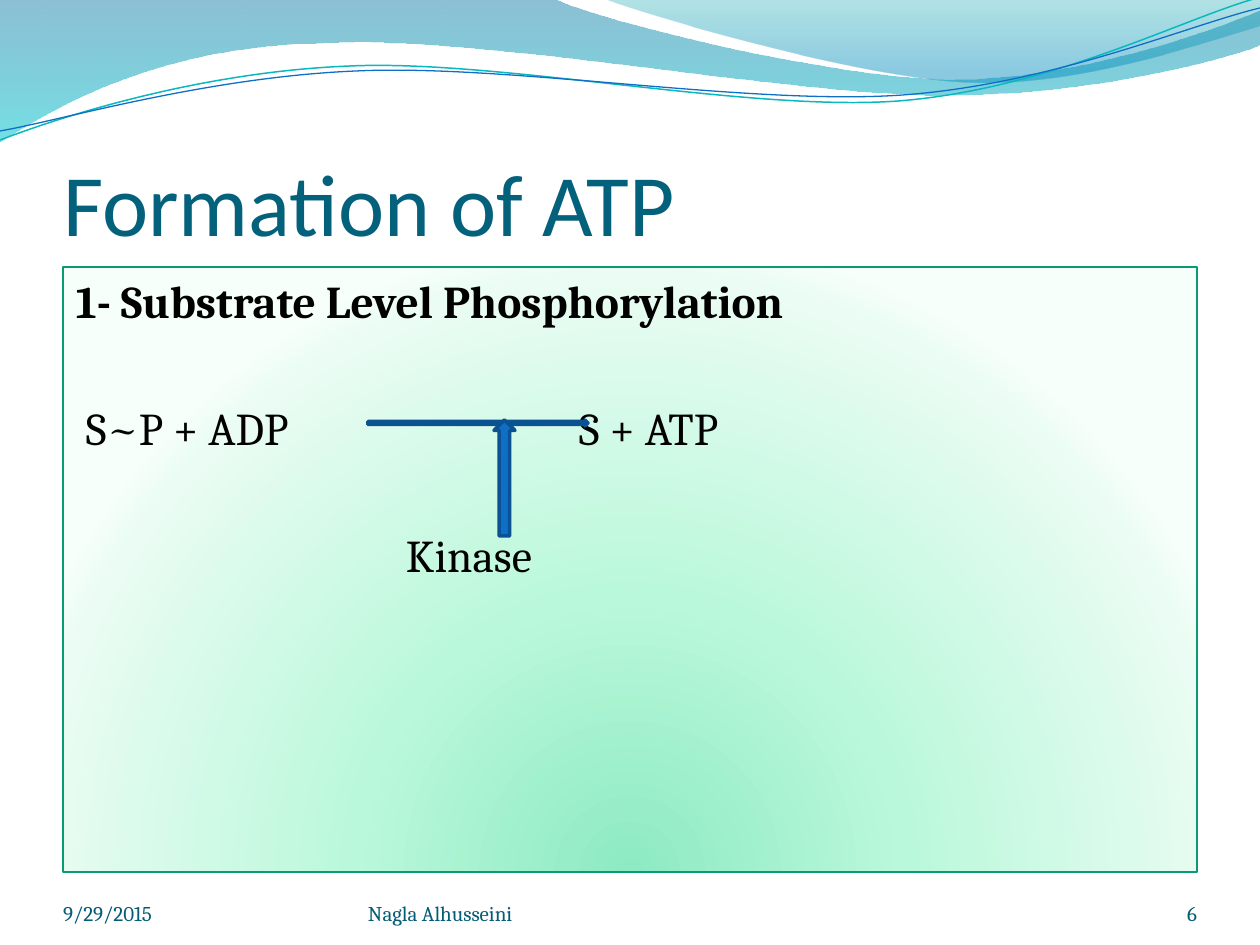
from dataclasses import dataclass

from pptx import Presentation
from pptx.dml.color import RGBColor
from pptx.enum.shapes import MSO_SHAPE
from pptx.enum.text import MSO_ANCHOR, MSO_AUTO_SIZE, PP_ALIGN
from pptx.oxml import parse_xml
from pptx.oxml.ns import nsdecls, qn
from pptx.util import Pt

RECTANGLE = MSO_SHAPE.RECTANGLE
RIGHT_ARROW = MSO_SHAPE.RIGHT_ARROW
UP_ARROW = MSO_SHAPE.UP_ARROW
TOP = MSO_ANCHOR.TOP
BOTTOM = MSO_ANCHOR.BOTTOM
LEFT = PP_ALIGN.LEFT
RIGHT = PP_ALIGN.RIGHT
NO_FIT = MSO_AUTO_SIZE.NONE

EMU_PER_PX = 914400 / 126
TITLE_ONLY = 5
COLORS = {
    "title": "04617B",
    "footer": "045D75",
    "text": "000000",
    "panel_line": "0A9B74",
    "arrow": "0F6FC6",
    "arrow_line": "0B5292",
    "teal_wave": "0AB8BF",
    "blue_wave": "0F6FC6",
    "ribbon_blue": "0074A1",
    "ribbon_aqua": "00C6CF",
    "ribbon_teal": "00A1A9",
    "ribbon_sky": "008BBF",
    "mint": "8DEAC2",
    "light_mint": "BAF8DB",
    "pale_mint": "EAFCF3",
    "white_mint": "F7FFFB",
}
DOWNWARD = '<a:lin ang="5400000" scaled="0"/>'
FROM_BELOW = '<a:path path="circle"><a:fillToRect l="50000" t="130000" r="50000" b="-30000"/></a:path>'


@dataclass(frozen=True)
class Stop:
    position: int
    color: str
    alpha: int = 100


@dataclass(frozen=True)
class Ribbon:
    points: tuple
    stops: tuple


@dataclass(frozen=True)
class Wave:
    points: tuple
    color: str
    width: float


@dataclass(frozen=True)
class Line:
    text: str
    before: float
    indent: int = 0
    bold: bool = False
    tab: int = 0


@dataclass(frozen=True)
class Arrow:
    kind: int
    area: tuple


@dataclass(frozen=True)
class Footer:
    text: str
    area: tuple
    align: int = LEFT


RIBBONS = (
    Ribbon(
        ((0, 0), (554, -1),
         (600, 21, 837, 79, 955, 79), (1075, 79, 1207, 33, 1260, 11), (1261, 45),
         (1239, 55, 1096, 96, 940, 95), (784, 95, 481, 35, 324, 43),
         (163, 45, 58, 105, -1, 142)),
        (Stop(0, "ribbon_blue", 45), Stop(100, "ribbon_aqua", 55)),
    ),
    Ribbon(
        ((604, -1), (641, 14, 859, 78, 969, 82), (1079, 87, 1211, 40, 1260, 26), (1260, 0)),
        (Stop(0, "ribbon_teal", 30), Stop(80, "ribbon_sky", 45)),
    ),
)
WAVES = (
    Wave(((0, 140), (60, 117, 199, 72, 349, 66), (498, 59, 747, 112, 898, 101),
          (1050, 89, 1182, 19, 1257, -2)), "teal_wave", 0.85),
    Wave(((0, 131), (59, 121, 207, 77, 357, 71), (508, 64, 752, 106, 903, 95),
          (1053, 84, 1186, 26, 1260, 8)), "blue_wave", 0.75),
)
PANEL_STOPS = (
    Stop(0, "mint"), Stop(43, "light_mint"), Stop(93, "pale_mint"), Stop(100, "white_mint"),
)
REACTION = (
    Line("1- Substrate Level Phosphorylation", 2, bold=True),
    Line(" S~P + ADP\tS + ATP", 41.5, tab=503),
    Line("Kinase", 41.5, indent=330),
)
ARROWS = (
    Arrow(RIGHT_ARROW, (368, 420, 220, 6)),
    Arrow(UP_ARROW, (494, 420, 21, 116)),
)
FOOTERS = (
    Footer("9/29/2015", (63, 876, 294, 50)),
    Footer("6", (1092, 876, 105, 50), RIGHT),
    Footer("Nagla Alhusseini", (368, 876, 462, 50)),
)


def emu(px: int) -> int:
    return round(px * EMU_PER_PX)


def place(area: tuple) -> list:
    return [emu(value) for value in area]


def rgb(name: str) -> RGBColor:
    return RGBColor.from_string(COLORS[name])


def stop_xml(stop: Stop) -> str:
    alpha = f'<a:alpha val="{stop.alpha * 1000}"/>' if stop.alpha < 100 else ""
    return (f'<a:gs pos="{stop.position * 1000}">'
            f'<a:srgbClr val="{COLORS[stop.color]}">{alpha}</a:srgbClr></a:gs>')


def set_gradient(shape, stops: tuple, direction: str) -> None:
    shape.fill.background()
    marks = "".join(stop_xml(stop) for stop in stops)
    gradient = parse_xml(
        f'<a:gradFill {nsdecls("a")} rotWithShape="1"><a:gsLst>{marks}</a:gsLst>{direction}</a:gradFill>'
    )
    properties = shape.element.spPr
    properties.replace(properties.find(qn("a:noFill")), gradient)


def draw_outline(page, points: tuple, close: bool):
    corners = [
        tuple(place(point[at:at + 2])) for point in points for at in range(0, len(point), 2)
    ]
    builder = page.shapes.build_freeform(*corners[0], scale=1.0)
    builder.add_line_segments(corners[1:], close=close)
    shape = builder.convert_to_shape()
    shape.shadow.inherit = False
    segments = iter(list(shape.element.iter(qn("a:lnTo"))))
    for point in points[1:]:
        segment = next(segments)
        if len(point) == 6:
            segment.tag = qn("a:cubicBezTo")
            for extra in (next(segments), next(segments)):
                segment.append(extra[0])
                extra.getparent().remove(extra)
    return shape


def draw_ribbon(page, ribbon: Ribbon) -> None:
    shape = draw_outline(page, ribbon.points, True)
    set_gradient(shape, ribbon.stops, DOWNWARD)
    shape.line.fill.background()


def draw_wave(page, wave: Wave) -> None:
    shape = draw_outline(page, wave.points, False)
    shape.fill.background()
    set_line(shape, wave.color, wave.width)


def set_line(shape, color: str, width: float) -> None:
    shape.line.color.rgb = rgb(color)
    shape.line.width = Pt(width)


def set_frame(frame, anchor: int, insets: tuple) -> None:
    frame.word_wrap = True
    frame.auto_size = NO_FIT
    frame.vertical_anchor = anchor
    frame.margin_left, frame.margin_top, frame.margin_right, frame.margin_bottom = place(insets)


def add_span(para, text: str, font: str, size: int, color: str, bold: bool = False) -> None:
    span = para.add_run()
    span.text = text
    span.font.name = font
    span.font.size = Pt(size)
    span.font.bold = bold
    span.font.color.rgb = rgb(color)


def draw_title(page, text: str) -> None:
    title = page.shapes.title
    title.left, title.top, title.width, title.height = place((63, 96, 1134, 158))
    set_frame(title.text_frame, BOTTOM, (0, 6, 0, 0))
    para = title.text_frame.paragraphs[0]
    para.alignment = LEFT
    add_span(para, text, "Calibri", 50, "title")


def draw_panel(page, lines: tuple) -> None:
    panel = page.shapes.add_shape(RECTANGLE, *place((63, 267, 1134, 605)))
    panel.shadow.inherit = False
    set_gradient(panel, PANEL_STOPS, FROM_BELOW)
    set_line(panel, "panel_line", 0.75)
    frame = panel.text_frame
    set_frame(frame, TOP, (13, 6, 13, 6))
    for index, line in enumerate(lines):
        para = frame.add_paragraph() if index else frame.paragraphs[0]
        para.alignment = LEFT
        para.space_before = Pt(line.before)
        properties = para._p.get_or_add_pPr()
        properties.set("marL", str(emu(line.indent)))
        if line.tab:
            properties.append(parse_xml(
                f'<a:tabLst {nsdecls("a")}><a:tab pos="{emu(line.tab)}" algn="l"/></a:tabLst>'
            ))
        add_span(para, line.text, "Cambria", 26, "text", line.bold)


def draw_arrow(page, arrow: Arrow) -> None:
    shape = page.shapes.add_shape(arrow.kind, *place(arrow.area))
    shape.shadow.inherit = False
    shape.fill.solid()
    shape.fill.fore_color.rgb = rgb("arrow")
    set_line(shape, "arrow_line", 2)


def draw_footer(page, footer: Footer) -> None:
    box = page.shapes.add_textbox(*place(footer.area))
    set_frame(box.text_frame, BOTTOM, (0, 0, 0, 0))
    para = box.text_frame.paragraphs[0]
    para.alignment = footer.align
    add_span(para, footer.text, "Cambria", 12, "footer")


def main() -> None:
    deck = Presentation()
    deck.slide_width, deck.slide_height = place((1260, 945))
    page = deck.slides.add_slide(deck.slide_layouts[TITLE_ONLY])
    for ribbon in RIBBONS:
        draw_ribbon(page, ribbon)
    for wave in WAVES:
        draw_wave(page, wave)
    draw_title(page, "Formation of ATP")
    draw_panel(page, REACTION)
    for arrow in ARROWS:
        draw_arrow(page, arrow)
    for footer in FOOTERS:
        draw_footer(page, footer)
    deck.save("out.pptx")


if __name__ == "__main__":
    main()
